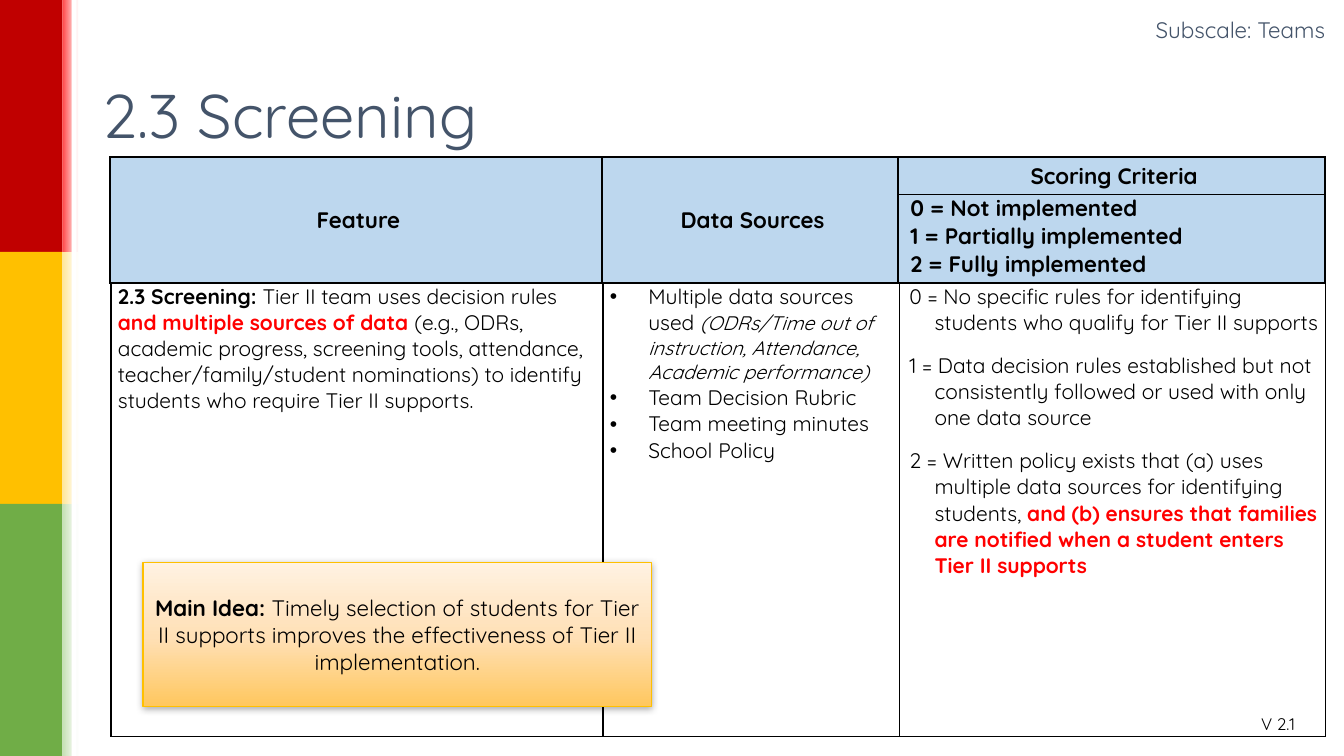
import pptx
import pptx.util
import pptx.dml.color
import pptx.enum.shapes
import pptx.enum.text
import pptx.oxml
import pptx.oxml.ns

Inches = pptx.util.Inches
Pt = pptx.util.Pt
ALIGN = pptx.enum.text.PP_ALIGN
ANCHOR = pptx.enum.text.MSO_ANCHOR
RECTANGLE = pptx.enum.shapes.MSO_SHAPE.RECTANGLE
NAMESPACE = pptx.oxml.ns.nsdecls("a")

# Content: a paragraph is a list of runs, a run is (text, style)
FONT = "Quicksand"
BLACK, RED, SLATE, WHITE = "000000", "FF0000", "44546A", "FFFFFF"
HEADER_FILL, GLOW = "BDD7EE", "DEEBF7"
BOLD = {"bold": True}
ALERT = {"bold": True, "color": RED}

BANDS = [("C00000", "FF4747"), ("FFC000", "FFE699"), ("70AD47", "C5E0B4")]
COLUMNS = [4.88, 2.94, 4.23]
HEADINGS = ["Feature", "Data Sources", "Scoring Criteria"]
SCORES = ["0 = Not implemented", "1 = Partially implemented", "2 = Fully implemented"]
FEATURE = [[
    ("2.3 Screening: ", BOLD),
    ("Tier II team uses decision rules ", {}),
    ("and multiple sources of data ", ALERT),
    ("(e.g., ODRs, academic progress, screening tools, attendance, "
     "teacher/family/student nominations) to identify students who "
     "require Tier II supports.", {}),
]]
DATA_SOURCES = [
    [("Multiple data sources used ", {}),
     ("(ODRs/Time out of instruction, Attendance, Academic performance)",
      {"size": 14, "italic": True})],
    [("Team Decision Rubric", {})],
    [("Team meeting minutes", {})],
    [("School Policy", {})],
]
CRITERIA = [
    [("0 = No specific rules for identifying students who qualify for Tier II supports", {})],
    [("1 = Data decision rules established but not consistently followed or "
      "used with only one data source", {})],
    [("2 = Written policy exists that (a) uses multiple data sources for "
      "identifying students, ", {}),
     ("and (b) ensures that families are notified when a student enters "
      "Tier II supports", ALERT)],
]
MAIN_IDEA = [[
    ("Main Idea: ", BOLD),
    ("Timely selection of students for Tier II supports improves the "
     "effectiveness of Tier II implementation.", {}),
]]


# Helpers
def rgb(value):
    return pptx.dml.color.RGBColor.from_string(value)


def element(xml):
    tag, rest = xml.split(" ", 1) if " " in xml.split(">")[0] else xml.split(">", 1)
    joiner = " " if " " in xml.split(">")[0] else ">"
    return pptx.oxml.parse_xml(f"{tag} {NAMESPACE}{joiner}{rest}")


def line_xml(tag, color, points):
    return element(f'<a:{tag} w="{Pt(points)}"><a:solidFill><a:srgbClr val="{color}"/>'
                   f'</a:solidFill></a:{tag}>')


def write(frame, paragraphs, size, color=BLACK, align=ALIGN.LEFT, indent=None,
          bullet=False, after=0, glow=False):
    frame.word_wrap = True
    for index, runs in enumerate(paragraphs):
        paragraph = frame.paragraphs[0] if index == 0 else frame.add_paragraph()
        paragraph.alignment = align
        if indent:
            properties = paragraph._p.get_or_add_pPr()
            properties.set("marL", str(Inches(indent[0])))
            properties.set("indent", str(Inches(indent[1])))
        if bullet:
            properties.append(element('<a:buFont typeface="Arial"/>'))
            properties.append(element('<a:buChar char="•"/>'))
        if after:
            paragraph.space_after = Pt(after)
        for text, style in runs:
            run = paragraph.add_run()
            run.text = text
            run.font.name = FONT
            run.font.size = Pt(style.get("size", size))
            run.font.bold = style.get("bold", False)
            run.font.italic = style.get("italic", False)
            run.font.color.rgb = rgb(style.get("color", color))
            if glow:
                run._r.get_or_add_rPr().insert(0, line_xml("ln", GLOW, 0.75))


def add_text(place, text, size, color, **options):
    box = slide.shapes.add_textbox(*map(Inches, place))
    box.text_frame.vertical_anchor = options.pop("anchor", ANCHOR.TOP)
    write(box.text_frame, [[(text, {})]], size, color, **options)


def add_rectangle(place, fill=None, gradient=None, angle=0):
    shape = slide.shapes.add_shape(RECTANGLE, *map(Inches, place))
    shape.shadow.inherit = False
    shape.line.fill.background()
    if fill:
        shape.fill.solid()
        shape.fill.fore_color.rgb = rgb(fill)
    else:
        stops = "".join(f'<a:gs pos="{position * 1000}"><a:srgbClr val="{color}"/></a:gs>'
                        for position, color in gradient)
        shape._element.spPr.find(pptx.oxml.ns.qn("a:prstGeom")).addnext(element(
            f'<a:gradFill rotWithShape="1"><a:gsLst>{stops}</a:gsLst>'
            f'<a:lin ang="{angle * 60000}" scaled="0"/></a:gradFill>'))
    return shape


def add_grid(left, top, heights):
    frame = slide.shapes.add_table(len(heights), len(COLUMNS), Inches(left), Inches(top),
                                   Inches(sum(COLUMNS)), Inches(sum(heights)))
    table = frame.table
    table.first_row = table.horz_banding = False
    for column, width in zip(table.columns, COLUMNS):
        column.width = Inches(width)
    for row, height in zip(table.rows, heights):
        row.height = Inches(height)
    return table


def style_cells(table, fill, border):
    for cell in table.iter_cells():
        cell.margin_left = cell.margin_right = Inches(0.07)
        cell.margin_top = cell.margin_bottom = 0
        if fill:
            cell.fill.solid()
            cell.fill.fore_color.rgb = rgb(fill)
        else:
            cell.fill.background()
        properties = cell._tc.get_or_add_tcPr()
        for index, side in enumerate(["lnL", "lnR", "lnT", "lnB"]):
            properties.insert(index, line_xml(side, BLACK, border))


presentation = pptx.Presentation()
presentation.slide_width = Inches(13.33)
presentation.slide_height = Inches(7.5)
slide = presentation.slides.add_slide(presentation.slide_layouts[6])

# Coloured side bands with fading edges
BAND_HEIGHT = 7.5 / len(BANDS)
for index, (solid, pale) in enumerate(BANDS):
    add_rectangle((0, index * BAND_HEIGHT, 0.62, BAND_HEIGHT), solid)
    add_rectangle((0.62, index * BAND_HEIGHT, 0.16, BAND_HEIGHT),
                  gradient=[(0, pale), (100, WHITE)])
add_rectangle((0.71, 0, 0.05, 7.5), WHITE)

# Version and title
add_text((12.41, 7.03, 0.92, 0.3), "V 2.1", 12, BLACK, glow=True)
add_text((0.92, 0.4, 12.42, 1.45), "2.3 Screening", 44, SLATE, anchor=ANCHOR.MIDDLE)

# Header table
header = add_grid(1.09, 1.56, [0.37, 0.88])
style_cells(header, HEADER_FILL, 1.5)
for column in (0, 1):
    header.cell(0, column).merge(header.cell(1, column))
for column, heading in enumerate(HEADINGS):
    cell = header.cell(0, column)
    cell.vertical_anchor = ANCHOR.MIDDLE
    write(cell.text_frame, [[(heading, BOLD)]], 16, align=ALIGN.CENTER, indent=(0.36, -0.31))
write(header.cell(1, 2).text_frame, [[(score, BOLD)] for score in SCORES], 16,
      indent=(0.36, -0.31))

# Body table
body = add_grid(1.1, 2.81, [4.5])
style_cells(body, None, 1)
write(body.cell(0, 0).text_frame, FEATURE, 15)
write(body.cell(0, 1).text_frame, DATA_SOURCES, 15, indent=(0.38, -0.38), bullet=True)
write(body.cell(0, 2).text_frame, CRITERIA, 15, indent=(0.28, -0.25), after=12)

# Main idea callout
callout = add_rectangle((1.42, 5.58, 5.04, 1.43), angle=270,
                        gradient=[(0, "FFC75E"), (48, "FFE0B6"), (100, "FFF2E2")])
callout.line.color.rgb = rgb("FFC000")
callout.line.width = Pt(1)
callout._element.spPr.find(pptx.oxml.ns.qn("a:effectLst")).append(element(
    f'<a:outerShdw blurRad="{Pt(5)}" dist="{Pt(1)}" dir="5400000" rotWithShape="0">'
    '<a:srgbClr val="000000"><a:alpha val="32000"/></a:srgbClr></a:outerShdw>'))
callout.text_frame.vertical_anchor = ANCHOR.MIDDLE
write(callout.text_frame, MAIN_IDEA, 16, align=ALIGN.CENTER)

# Subscale label
add_text((9.25, 0.11, 3.99, 0.37), "Subscale: Teams", 16, SLATE, align=ALIGN.RIGHT, glow=True)

presentation.save("out.pptx")
